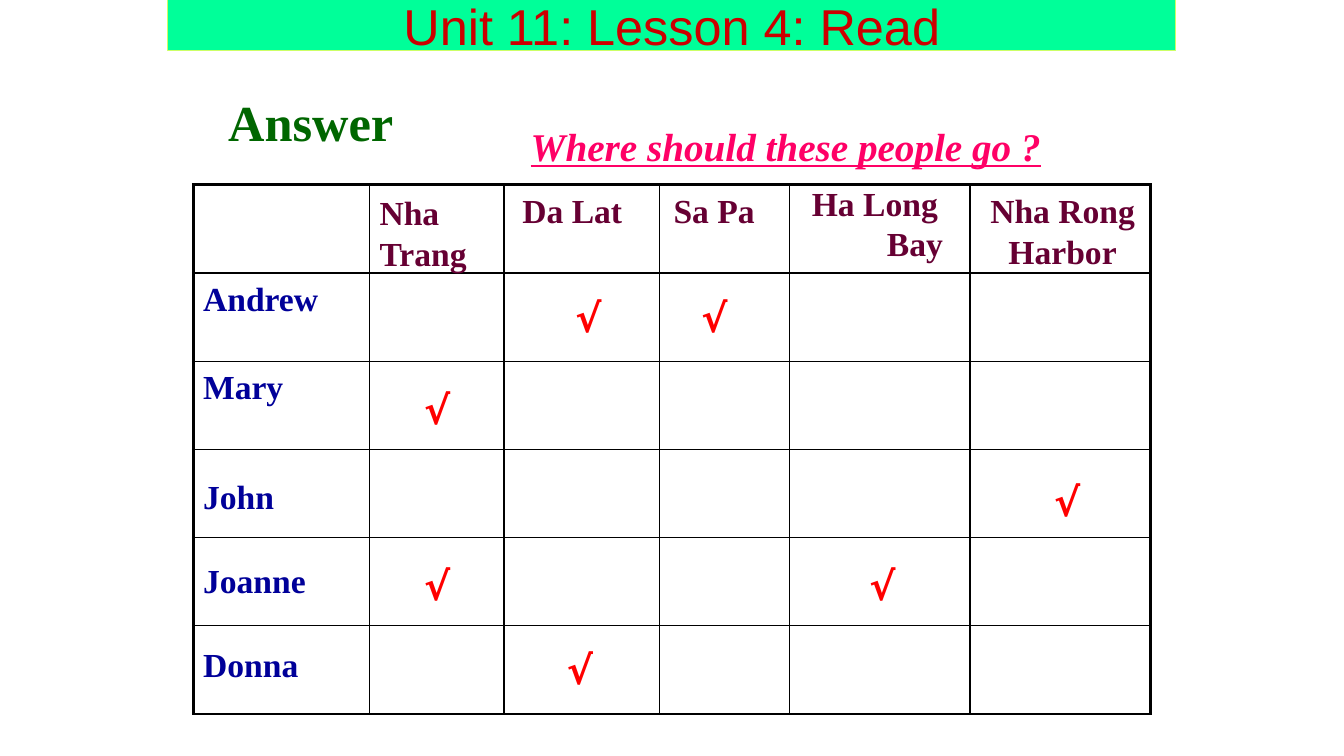
from lxml.etree import SubElement
from pptx import Presentation
from pptx.dml.color import RGBColor
from pptx.enum.shapes import MSO_SHAPE
from pptx.enum.text import MSO_ANCHOR, MSO_AUTO_SIZE, PP_ALIGN
from pptx.oxml.ns import qn
from pptx.util import Pt

PX = 9525  # EMU in one px
LEFT, CENTER, RIGHT = PP_ALIGN.LEFT, PP_ALIGN.CENTER, PP_ALIGN.RIGHT

TITLE = {"name": "Arial", "size": Pt(36), "color": "CC0000"}
ANSWER = {"name": "Times New Roman", "size": Pt(36), "bold": True, "color": "006600"}
QUESTION = {"name": "Times New Roman", "size": Pt(28), "bold": True,
            "italic": True, "underline": True, "color": "FF0066"}
PERSON = {"name": "Times New Roman", "size": Pt(24), "bold": True, "color": "000099"}
PLACE = {**PERSON, "color": "660033"}
CHECK = {"name": "Comic Neue", "size": Pt(28), "bold": True, "color": "FF0000"}

COLUMN_WIDTHS = [168, 128, 148, 124, 172, 172]
ROW_HEIGHT = 84
ROW_COUNT = 6

# Boxes are left, top, width, height, measured from the table's corner
PLACES = [
    ([("Nha Trang", LEFT)], (168, 2, 128, 87), {}),
    ([("Da Lat", LEFT)], (304, 0, 136, 48), {}),
    ([("Sa Pa", LEFT)], (448, 0, 120, 48), {}),
    ([("Ha Long", CENTER), ("Bay", RIGHT)], (575, -7, 152, 87), {"margin_right": 13 * PX}),
    ([("Nha Rong Harbor", CENTER)], (744, 0, 168, 87), {}),
]
PEOPLE = [("Andrew", 84), ("Mary", 168), ("John", 272), ("Joanne", 352), ("Donna", 432)]
CHECKS = [(320, 88), (440, 88), (176, 176), (776, 264), (176, 344), (600, 344), (312, 424)]


def rgb(color):
    return RGBColor.from_string(color)


def scaled(box):
    return [length * PX for length in box]


def write(frame, lines, style, **settings):
    """Put (text, alignment) lines into a text frame."""
    for name, value in settings.items():
        setattr(frame, name, value)
    for number, (text, alignment) in enumerate(lines):
        paragraph = frame.add_paragraph() if number else frame.paragraphs[0]
        paragraph.alignment = alignment
        run = paragraph.add_run()
        run.text = text
        for name, value in style.items():
            if name == "color":
                run.font.color.rgb = rgb(value)
            else:
                setattr(run.font, name, value)


def add_label(slide, box, lines, style, **settings):
    shape = slide.shapes.add_textbox(*scaled(box))
    write(shape.text_frame, lines, style, **{"word_wrap": True, **settings})


def set_border(cell, side, points):
    line = SubElement(cell._tc.get_or_add_tcPr(), qn(f"a:{side}"), w=str(Pt(points)))
    fill = SubElement(line, qn("a:solidFill"))
    SubElement(fill, qn("a:srgbClr"), val="000000")


def add_banner(slide, box):
    shape = slide.shapes.add_shape(MSO_SHAPE.RECTANGLE, *scaled(box))
    shape.shadow.inherit = False
    shape.fill.solid()
    shape.fill.fore_color.rgb = rgb("00FF99")
    shape.line.color.rgb = rgb("CCFF66")
    shape.line.width = Pt(0.75)
    write(shape.text_frame, [("Unit 11: Lesson 4: Read", CENTER)], TITLE,
          word_wrap=False, vertical_anchor=MSO_ANCHOR.MIDDLE)


def add_headings(slide, box):
    left, top, width, height = box
    add_label(slide, (left, top, 200, height), [("Answer", CENTER)], ANSWER)
    add_label(slide, (left + 300, top + 30, width - 300, 55),
              [("Where should these people go ?", LEFT)], QUESTION)


def add_grid(slide, box):
    table = slide.shapes.add_table(ROW_COUNT, len(COLUMN_WIDTHS), *scaled(box)).table
    table.first_row = table.horz_banding = False
    for column, width in zip(table.columns, COLUMN_WIDTHS):
        column.width = width * PX
    for row in table.rows:
        row.height = ROW_HEIGHT * PX
    last_row, last_column = ROW_COUNT - 1, len(COLUMN_WIDTHS) - 1
    for row in range(ROW_COUNT):
        for column in range(len(COLUMN_WIDTHS)):
            cell = table.cell(row, column)
            outer = {"lnL": column == 0, "lnR": column == last_column,
                     "lnT": row == 0, "lnB": row == last_row}
            for side, is_outer in outer.items():
                set_border(cell, side, 2.25 if is_outer else 1)
            cell.fill.background()


def add_answers(slide, box):
    left, top, width, height = box
    add_grid(slide, box)
    fitted = {"vertical_anchor": MSO_ANCHOR.MIDDLE,
              "auto_size": MSO_AUTO_SIZE.SHAPE_TO_FIT_TEXT}

    # Names of people and places
    for name, y in PEOPLE:
        add_label(slide, (left, top + y, 144, 48), [(name, LEFT)], PERSON, **fitted)
    for lines, (x, y, w, h), margins in PLACES:
        add_label(slide, (left + x, top + y, w, h), lines, PLACE, **fitted, **margins)

    # Check marks
    for x, y in CHECKS:
        add_label(slide, (left + x, top + y, 112, 67), [("√", LEFT)], CHECK,
                  margin_left=44 * PX, margin_top=15 * PX)


def main():
    presentation = Presentation()
    presentation.slide_width, presentation.slide_height = 1280 * PX, 720 * PX
    slide = presentation.slides.add_slide(presentation.slide_layouts[6])
    add_banner(slide, (160, 0, 960, 48))
    add_headings(slide, (196, 82, 812, 65))
    add_answers(slide, (184, 176, sum(COLUMN_WIDTHS), ROW_COUNT * ROW_HEIGHT))
    presentation.save("out.pptx")


if __name__ == "__main__":
    main()
